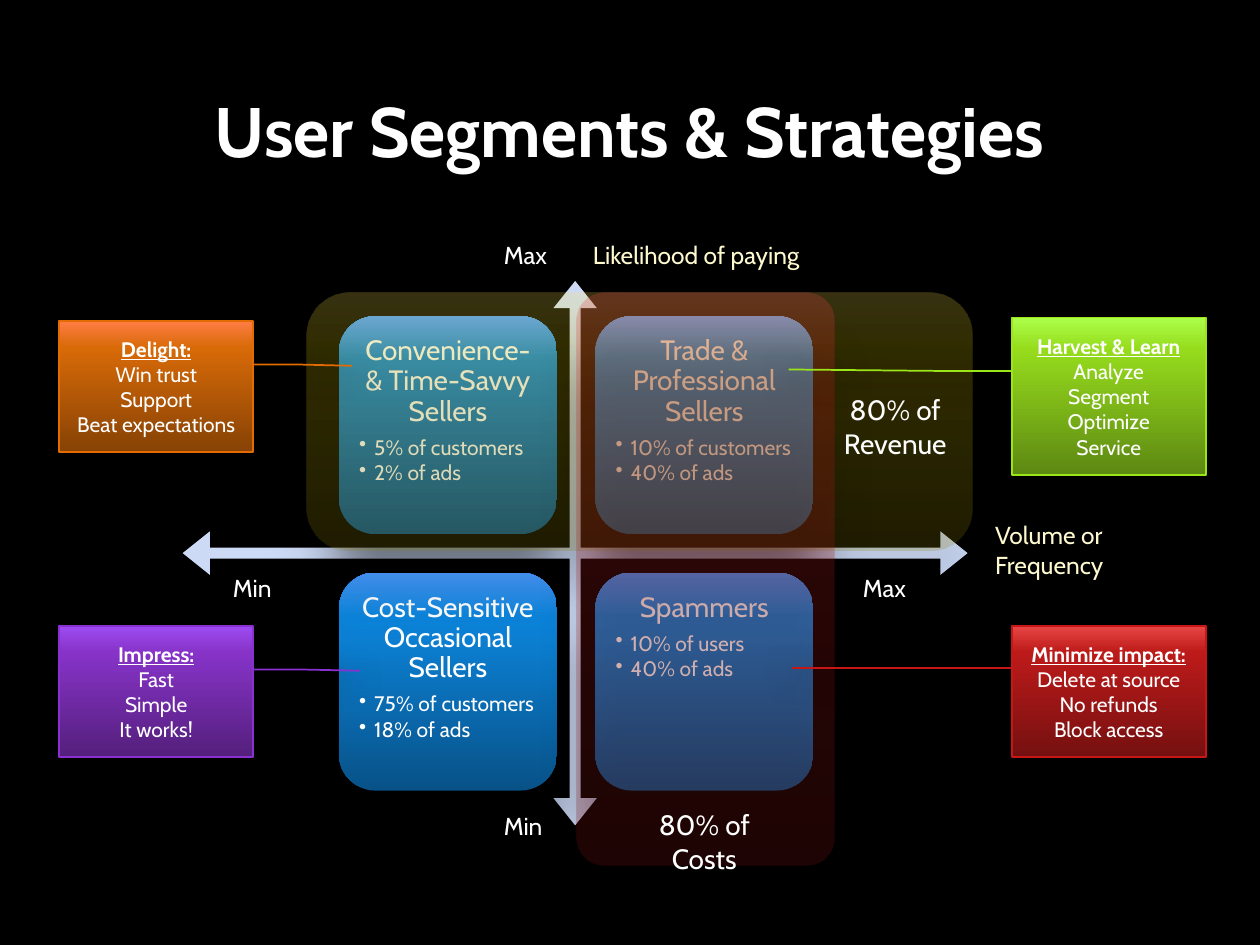
from pptx import Presentation
from pptx.dml.color import RGBColor
from pptx.enum.shapes import MSO_SHAPE as SHAPE
from pptx.enum.text import MSO_ANCHOR as ANCHOR, PP_ALIGN as ALIGN
from pptx.oxml import parse_xml
from pptx.oxml.ns import nsdecls, qn
from pptx.util import Emu, Inches, Pt

FONT = "Cabin"
WHITE, CREAM = "FFFFFF", "FDF8CD"
BLUE = ("085288", "0C85DC", "489AFF")
YELLOW = ("8F8105", "E7CF08", "FFE552")
RED = ("751010", "BD1A1A", "E84545")
GREEN = ("5D8812", "96DC1D", "ACFF4A")
ORANGE = ("864205", "D86A08", "FF7D44")
PURPLE = ("541F7C", "8733C8", "9D4BF2")

# Shadows as opacity in %, blur and distance in points
CRISP, SOFT = (80, 18, 3), (40, 25, 30)

# Segment grid: origin, pitch and size in inches
GRID_X, GRID_Y, PITCH, BOX = 2.69, 2.51, 2.035, 1.73
INSET = 0.09
CALLOUT_X, CALLOUT_W = (0.47, 8.03), 1.54

SEGMENTS = [
    (0, 0, "Convenience- & Time-Savvy Sellers", ["5% of customers", "2% of ads"]),
    (1, 0, "Trade & Professional Sellers", ["10% of customers", "40% of ads"]),
    (0, 1, "Cost-Sensitive Occasional Sellers", ["75% of customers", "18% of ads"]),
    (1, 1, "Spammers", ["10% of users", "40% of ads"]),
]
AXIS_LABELS = [
    ("Volume or Frequency", (7.8, 4.08, 1.13, 0.57), CREAM, ALIGN.LEFT),
    ("Likelihood of paying", (4.53, 1.86, 1.99, 0.34), CREAM, ALIGN.CENTER),
    ("Max", (6.75, 4.5, 0.69, 0.34), WHITE, ALIGN.LEFT),
    ("Min", (1.75, 4.5, 0.69, 0.34), WHITE, ALIGN.LEFT),
    ("Min", (3.9, 6.39, 0.69, 0.34), WHITE, ALIGN.LEFT),
    ("Max", (3.9, 1.86, 0.69, 0.34), WHITE, ALIGN.LEFT),
]
# Column, top, height, gradient, line colour, leader points as (y, x) shares, text
CALLOUTS = [
    (0, 4.97, 1.04, PURPLE, "8A30D0", (0.33, 1, 0.33, 1.22, 0.34, 1.55),
     ["Impress:", "Fast", "Simple", "It works!"]),
    (1, 4.97, 1.04, RED, "C61616", (0.32, 0, 0.32, -0.31, 0.32, -1.13),
     ["Minimize impact:", "Delete at source", "No refunds", "Block access"]),
    (1, 2.52, 1.25, GREEN, "9BE618", (0.34, 0, 0.34, -0.31, 0.33, -1.15),
     ["Harvest & Learn", "Analyze", "Segment", "Optimize", "Service"]),
    (0, 2.55, 1.04, ORANGE, "E26C02", (0.33, 1, 0.33, 1.22, 0.34, 1.51),
     ["Delight:", "Win trust", "Support", "Beat expectations"]),
]


def rgb(color):
    return RGBColor.from_string(color)


def set_gradient(sp, colors, opacity):
    """Fill from the bottom up with three stops."""
    sp.fill.gradient()
    sp.fill.gradient_angle = 90
    stops = sp._element.spPr.find(".//" + qn("a:gsLst"))
    stops.clear()
    for pos, color in zip((0, 80, 100), colors):
        stops.append(parse_xml(
            f'<a:gs {nsdecls("a")} pos="{pos * 1000}"><a:srgbClr val="{color}">'
            f'<a:alpha val="{opacity * 1000}"/></a:srgbClr></a:gs>'))


def set_shadow(sp, opacity, blur, distance):
    sp.shadow.inherit = False
    sp._element.spPr.find(qn("a:effectLst")).append(parse_xml(
        f'<a:outerShdw {nsdecls("a")} blurRad="{Pt(blur)}" dist="{Pt(distance)}" '
        f'dir="5400000" rotWithShape="0"><a:srgbClr val="000000">'
        f'<a:alpha val="{opacity * 1000}"/></a:srgbClr></a:outerShdw>'))


def add_shape(s, kind, at, fill, shadow, opacity=100, line=None, adjust=()):
    """Add a preset shape; fill is one colour or a tuple of gradient colours."""
    sp = s.shapes.add_shape(kind, *map(Inches, at))
    for i, value in enumerate(adjust):
        sp.adjustments[i] = value
    if isinstance(fill, tuple):
        set_gradient(sp, fill, opacity)
    else:
        sp.fill.solid()
        sp.fill.fore_color.rgb = rgb(fill)
    if line:
        sp.line.color.rgb = rgb(line)
        sp.line.width = Pt(1)
    else:
        sp.line.fill.background()
    set_shadow(sp, *shadow)
    return sp


def write(p, text, size, color=WHITE, align=ALIGN.CENTER, **font):
    p.alignment = align
    r = p.add_run()
    r.text = text
    r.font.color.rgb = rgb(color)
    for name, value in {"name": FONT, "size": Pt(size), **font}.items():
        setattr(r.font, name, value)


def paragraphs(tf, count):
    return [tf.paragraphs[0]] + [tf.add_paragraph() for _ in range(count - 1)]


def add_textbox(s, at, inset=None):
    tf = s.shapes.add_textbox(*map(Inches, at)).text_frame
    tf.word_wrap = True
    if inset is not None:
        for side in ("left", "right", "top", "bottom"):
            setattr(tf, f"margin_{side}", Inches(inset))
    return tf


def add_label(s, text, at, size, color=WHITE, align=ALIGN.CENTER):
    write(add_textbox(s, at).paragraphs[0], text, size, color, align)


def add_bullet(p):
    pPr = p._p.get_or_add_pPr()
    indent = Inches(0.12)
    pPr.set("marL", str(indent))
    pPr.set("indent", str(Emu(-indent)))
    pPr.append(parse_xml(f'<a:buChar {nsdecls("a")} char="•"/>'))


def add_segment(s, col, row, heading, facts):
    x, y = GRID_X + col * PITCH, GRID_Y + row * PITCH
    add_shape(s, SHAPE.ROUNDED_RECTANGLE, (x, y, BOX, BOX), BLUE, SOFT)
    side = BOX - 2 * INSET
    tf = add_textbox(s, (x + INSET, y + INSET, side, side), 0.07)
    first, *rest = paragraphs(tf, 1 + len(facts))
    write(first, heading, 16)
    first.line_spacing, first.space_after = 0.9, Pt(5.6)
    for p, fact in zip(rest, facts):
        p.line_spacing, p.space_after = 0.9, Pt(1.8)
        add_bullet(p)
        write(p, fact, 12, align=ALIGN.LEFT)


def add_callout(s, col, top, height, colors, line, leader, lines):
    sp = add_shape(s, SHAPE.LINE_CALLOUT_2, (CALLOUT_X[col], top, CALLOUT_W, height),
                   colors, CRISP, line=line, adjust=leader)
    tf = sp.text_frame
    tf.word_wrap = True
    tf.vertical_anchor = ANCHOR.MIDDLE
    for i, (p, text) in enumerate(zip(paragraphs(tf, len(lines)), lines)):
        write(p, text, 12, bold=i == 0, underline=i == 0)


def add_title(s, text):
    sp = s.shapes.title
    sp.left, sp.top, sp.width, sp.height = map(Inches, (0.85, 0.12, 8.29, 1.81))
    sp.text_frame.vertical_anchor = ANCHOR.MIDDLE
    write(sp.text_frame.paragraphs[0], text, 40, bold=True)


def main():
    prs = Presentation()
    prs.slide_width, prs.slide_height = Inches(10), Inches(7.5)
    s = prs.slides.add_slide(prs.slide_layouts[5])
    s.background.fill.solid()
    s.background.fill.fore_color.rgb = rgb("000000")

    add_title(s, "User Segments & Strategies")
    add_shape(s, SHAPE.QUAD_ARROW, (1.45, 2.23, 6.23, 4.32), "CCDAF5", CRISP,
              adjust=(0.02, 0.04, 0.05))
    for segment in SEGMENTS:
        add_segment(s, *segment)

    add_shape(s, SHAPE.ROUNDED_RECTANGLE, (2.43, 2.32, 5.29, 2.05), YELLOW, SOFT, 21)
    add_label(s, "80% of Revenue", (6.56, 3.07, 1.09, 0.64), 16)
    add_shape(s, SHAPE.ROUNDED_RECTANGLE, (4.58, 2.32, 2.04, 4.55), RED, SOFT, 25,
              adjust=(0.11,))
    add_label(s, "80% of Costs", (4.89, 6.36, 1.4, 0.37), 16)

    for text, at, color, align in AXIS_LABELS:
        add_label(s, text, at, 14, color, align)
    for callout in CALLOUTS:
        add_callout(s, *callout)
    prs.save("out.pptx")


if __name__ == "__main__":
    main()
